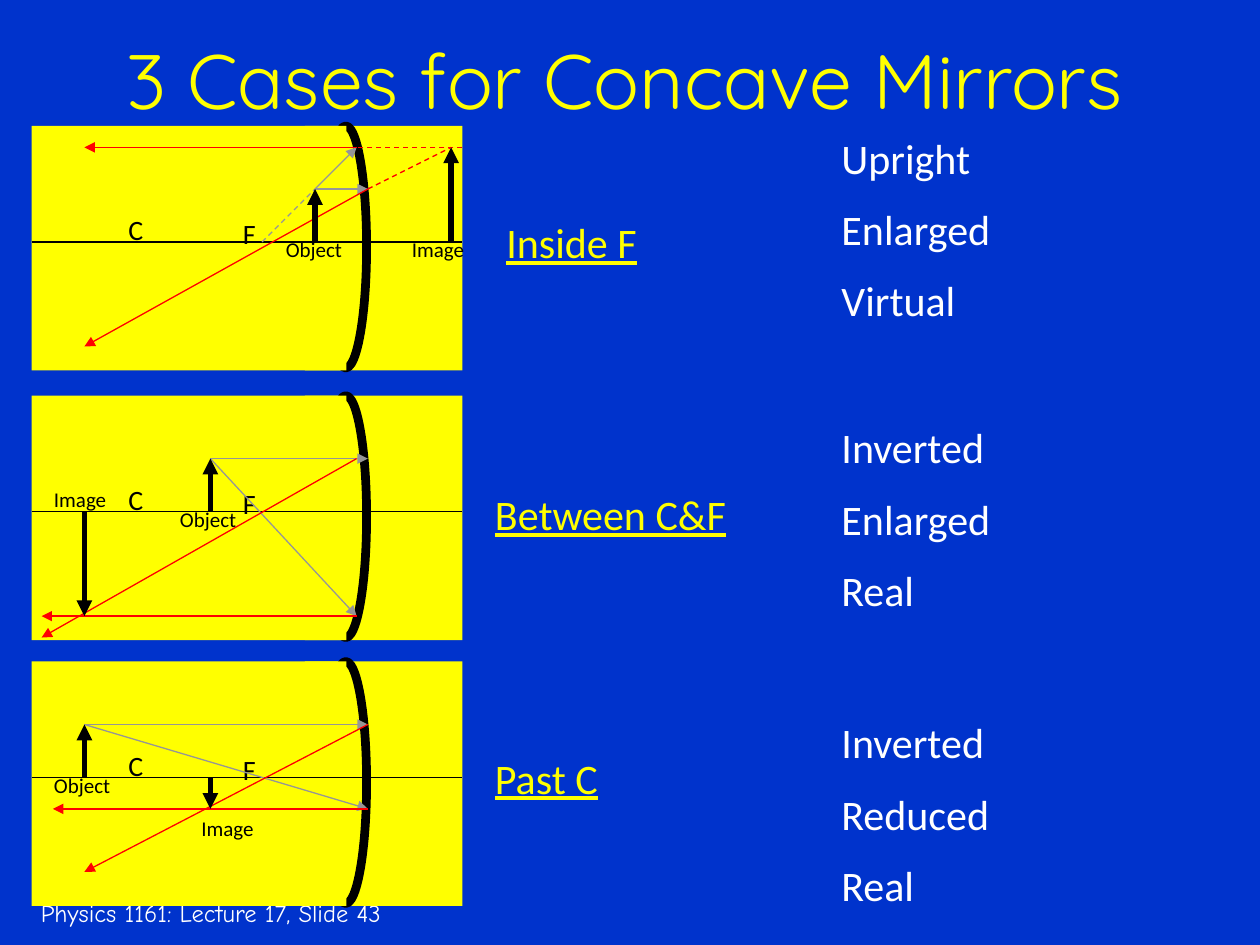
from lxml import etree
from pptx import Presentation
from pptx.dml.color import RGBColor
from pptx.enum.dml import MSO_LINE
from pptx.enum.shapes import MSO_CONNECTOR, MSO_SHAPE
from pptx.enum.text import MSO_ANCHOR, PP_ALIGN
from pptx.oxml.ns import qn
from pptx.util import Inches, Pt

RECTANGLE, OVAL = MSO_SHAPE.RECTANGLE, MSO_SHAPE.OVAL
STRAIGHT, DASH = MSO_CONNECTOR.STRAIGHT, MSO_LINE.DASH
LEFT, CENTER = PP_ALIGN.LEFT, PP_ALIGN.CENTER
MIDDLE = MSO_ANCHOR.MIDDLE

BLUE = RGBColor(0x00, 0x33, 0xCC)
YELLOW = RGBColor(0xFF, 0xFF, 0x00)
WHITE = RGBColor(0xFF, 0xFF, 0xFF)
BLACK = RGBColor(0x00, 0x00, 0x00)
GRAY = RGBColor(0x96, 0x96, 0x96)
RED = RGBColor(0xFF, 0x00, 0x00)

AXIS = 0.92  # optical axis, measured from the top of a diagram


def add_text(shapes, place, lines, size, color, font="Calibri", align=LEFT, underline=None):
    """Add a text box with one paragraph per line; place is left, top, width, height."""
    box = shapes.add_textbox(*[Inches(value) for value in place])
    frame = box.text_frame
    frame.word_wrap = True
    for index, line in enumerate(lines):
        para = frame.paragraphs[0] if index == 0 else frame.add_paragraph()
        para.alignment = align
        if index:
            para.space_before = Pt(size / 2)
        span = para.add_run()
        span.text = line
        span.font.size = Pt(size)
        span.font.name = font
        span.font.color.rgb = color
        span.font.underline = underline
    return box


def add_line(shapes, points, color, width=0.75, arrow=True, dashed=False):
    """Draw a line through points (x1, y1, x2, y2), with the arrowhead at its end."""
    line = shapes.add_connector(STRAIGHT, *[Inches(value) for value in points])
    line.line.color.rgb = color
    line.line.width = Pt(width)
    if dashed:
        line.line.dash_style = DASH
    if arrow:
        etree.SubElement(line.line._get_or_add_ln(), qn("a:tailEnd"), type="triangle")
    etree.SubElement(line._element.spPr, qn("a:effectLst"))


# Heights inside a diagram are measured from its top.
# Rays: x1, y1, x2, y2. Object and image: x, tip. Labels: left, top.
cases = [
    {
        "top": 1, "name": "Inside F", "name_at": (3.92, 1.67, 2, 0.67),
        "traits": ["Upright", "Enlarged", "Virtual"], "traits_top": 1,
        "object": (2.5, 0.5), "image": (3.58, 0.17),
        "incoming": [(2.5, 0.5, 2.92, 0.5), (2.5, 0.5, 2.83, 0.17)],
        "reflected": [(2.92, 0.5, 0.67, 1.75), (2.83, 0.17, 0.67, 0.17)],
        "extended": [(2.08, AXIS, 2.5, 0.5, GRAY), (2.92, 0.5, 3.58, 0.17, RED),
                     (3.67, 0.17, 2.83, 0.17, RED)],
        "object_label": (2.17, 0.83), "image_label": (3.17, 0.83),
    },
    {
        "top": 3.14, "name": "Between C&F", "name_at": (3.83, 3.83, 3.42, 1.17),
        "traits": ["Inverted", "Enlarged", "Real"], "traits_top": 3.3,
        "object": (1.67, 0.5), "image": (0.67, 1.75),
        "incoming": [(1.67, 0.5, 2.83, 1.75), (1.67, 0.5, 2.92, 0.5)],
        "reflected": [(2.83, 1.75, 0.33, 1.75), (2.83, 0.5, 0.33, 1.92)],
        "extended": [],
        "object_label": (1.33, 0.83), "image_label": (0.33, 0.67),
    },
    {
        "top": 5.25, "name": "Past C", "name_at": (3.83, 5.92, 2.67, 1.17),
        "traits": ["Inverted", "Reduced", "Real"], "traits_top": 5.64,
        "object": (0.67, 0.5), "image": (1.67, 1.17),
        "incoming": [(0.67, 0.5, 2.92, 0.5), (0.67, 0.5, 2.92, 1.17)],
        "reflected": [(2.92, 1.17, 0.42, 1.17), (2.92, 0.5, 0.67, 1.67)],
        "extended": [],
        "object_label": (0.33, 0.83), "image_label": (1.5, 1.17),
    },
]

deck = Presentation()
deck.slide_width = Inches(10)
deck.slide_height = Inches(7.5)
page = deck.slides.add_slide(deck.slide_layouts[6])
page.background.fill.solid()
page.background.fill.fore_color.rgb = BLUE

add_text(page.shapes, (0.09, 7.08, 3.17, 0.31), ["Physics 1161: Lecture 17, Slide 43"],
         14, WHITE, "Comic Neue", CENTER)
title = add_text(page.shapes, (0.42, 0, 9.08, 1.25), ["3 Cases for Concave Mirrors"],
                 44, YELLOW, "Quicksand", CENTER)
title.text_frame.vertical_anchor = MIDDLE

for case in cases:
    top = case["top"]
    diagram = page.shapes.add_group_shape().shapes

    # The second rectangle hides the left half of the oval, leaving the mirror.
    for kind, left, width, height in [(RECTANGLE, 0.25, 3.42, 1.94),
                                      (OVAL, 2.58, 0.33, 1.92),
                                      (RECTANGLE, 2.42, 0.33, 1.94)]:
        shape = diagram.add_shape(kind, Inches(left), Inches(top), Inches(width), Inches(height))
        shape.shadow.inherit = False
        if kind == OVAL:
            shape.fill.background()
            shape.line.color.rgb = BLACK
            shape.line.width = Pt(5)
        else:
            shape.fill.solid()
            shape.fill.fore_color.rgb = YELLOW
            shape.line.fill.background()

    for letter, left, offset in [("C", 0.92, 0.64), ("F", 1.83, 0.67)]:
        add_text(diagram, (left, top + offset, 0.35, 0.37), [letter], 16, BLACK)
    add_line(diagram, (0.25, top + AXIS, 3.67, top + AXIS), BLACK, arrow=False)

    for rays, color in [(case["incoming"], GRAY), (case["reflected"], RED)]:
        for x1, y1, x2, y2 in rays:
            add_line(diagram, (x1, top + y1, x2, top + y2), color)
    for x1, y1, x2, y2, color in case["extended"]:
        add_line(diagram, (x1, top + y1, x2, top + y2), color, arrow=False, dashed=True)

    for word in ("Object", "Image"):
        x, tip = case[word.lower()]
        add_line(diagram, (x, top + AXIS, x, top + tip), BLACK, width=3)
        left, offset = case[word.lower() + "_label"]
        add_text(diagram, (left, top + offset, 0.75, 0.3), [word], 12, BLACK)

    add_text(page.shapes, case["name_at"], [case["name"]], 24, YELLOW, underline=True)
    add_text(page.shapes, (6.58, case["traits_top"], 1.92, 1.7), case["traits"], 24, WHITE)

deck.save("out.pptx")
